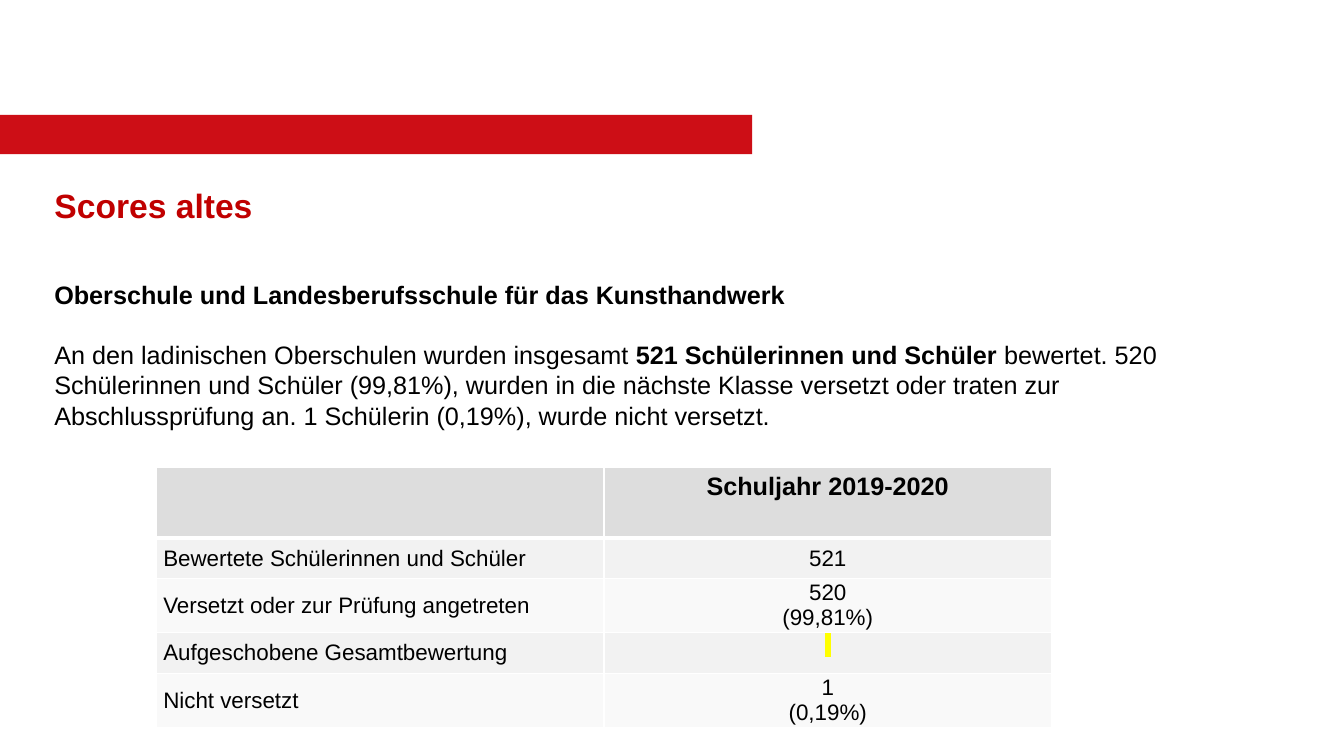
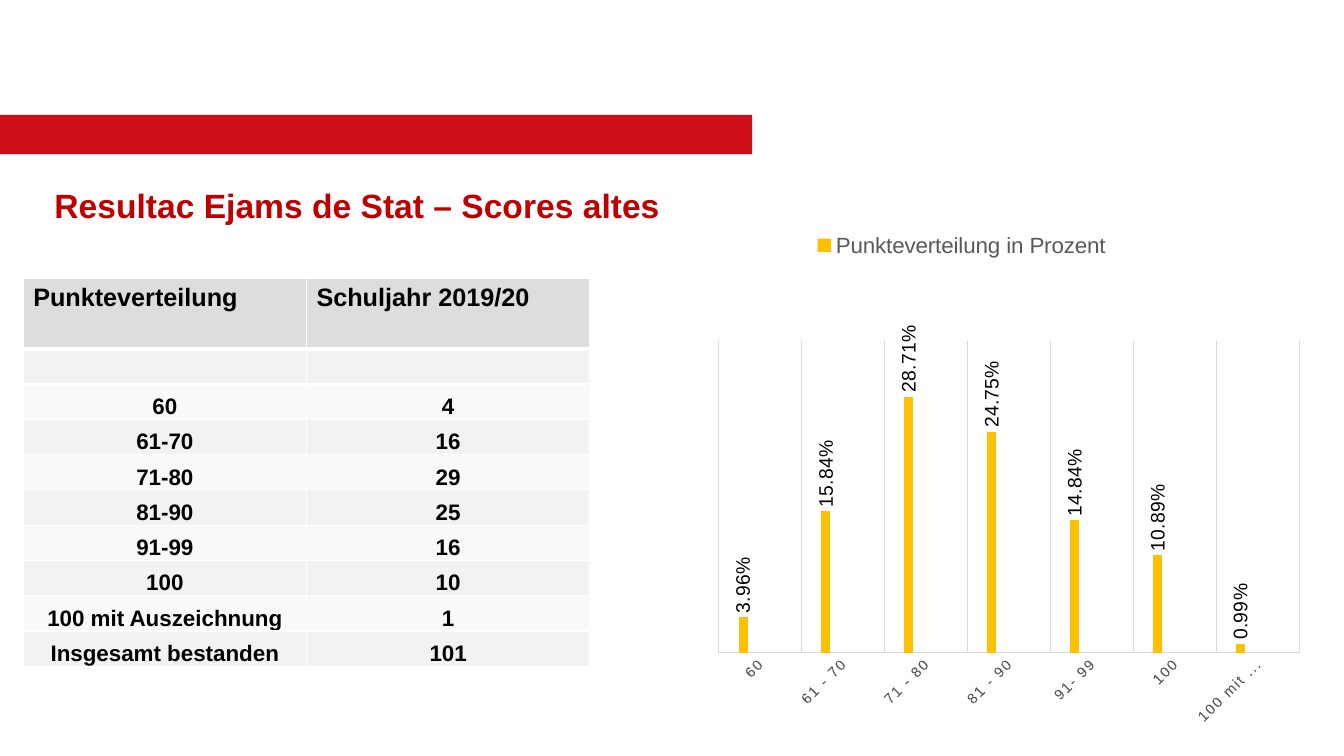
from pptx import Presentation
from pptx.chart.data import CategoryChartData
from pptx.dml.color import RGBColor
from pptx.enum.chart import XL_CHART_TYPE, XL_LABEL_POSITION, XL_LEGEND_POSITION, XL_TICK_MARK
from pptx.enum.shapes import MSO_SHAPE
from pptx.enum.text import MSO_ANCHOR, PP_ALIGN
from pptx.oxml import parse_xml
from pptx.oxml.ns import nsdecls
from pptx.util import Inches, Pt

LEFT, CENTER = PP_ALIGN.LEFT, PP_ALIGN.CENTER
TOP, MIDDLE, BOTTOM = MSO_ANCHOR.TOP, MSO_ANCHOR.MIDDLE, MSO_ANCHOR.BOTTOM
RECTANGLE = MSO_SHAPE.RECTANGLE
CLUSTERED = XL_CHART_TYPE.COLUMN_CLUSTERED
OUTSIDE_END = XL_LABEL_POSITION.OUTSIDE_END
LEGEND_TOP = XL_LEGEND_POSITION.TOP
NO_TICKS = XL_TICK_MARK.NONE

FONT = "Arial"
BAND_RED, TITLE_RED, BLACK, WHITE = "CD0E16", "C00000", "000000", "FFFFFF"
HEADER_GREY, ROW_GREYS = "DDDDDD", ("F2F2F2", "F9F9F9")
AXIS_TEXT, AXIS_LINE, BAR_YELLOW = "595959", "D9D9D9", "FFC000"
HEADER_HEIGHT = 0.7

# Content: school results
SCORES_TITLE = "Scores altes"
SCORES_TEXT = [
    [("Oberschule und Landesberufsschule für das Kunsthandwerk", True)],
    [("An den ladinischen Oberschulen wurden insgesamt ", False),
     ("521 Schülerinnen und Schüler", True),
     (" bewertet. 520 Schülerinnen und Schüler (99,81%), wurden in die nächste "
      "Klasse versetzt oder traten zur Abschlussprüfung an. 1 Schülerin (0,19%), "
      "wurde nicht versetzt.", False)],
]
MARKED_BLANK = " "
SCORES_ROWS = [
    ("", "Schuljahr 2019-2020"),
    ("Bewertete Schülerinnen und Schüler", "521"),
    ("Versetzt oder zur Prüfung angetreten", "520\n(99,81%)"),
    ("Aufgeschobene Gesamtbewertung", MARKED_BLANK),
    ("Nicht versetzt", "1\n(0,19%)"),
]
SCORES_HEIGHTS = [HEADER_HEIGHT, 0.4, 0.53, 0.41, 0.53]

# Content: final exams
EXAMS_TITLE = "Resultac Ejams de Stat – Scores altes"
EXAMS_ROWS = [
    ("Punkteverteilung", "Schuljahr 2019/20"),
    ("", ""),
    ("60", "4"),
    ("61-70", "16"),
    ("71-80", "29"),
    ("81-90", "25"),
    ("91-99", "16"),
    ("100", "10"),
    ("100 mit Auszeichnung", "1"),
    ("Insgesamt bestanden", "101"),
]
EXAMS_HEIGHTS = [HEADER_HEIGHT] + [0.35] * (len(EXAMS_ROWS) - 1)
SHARES_NAME = "Punkteverteilung in Prozent"
SHARES = {"60": 0.0396, "61 - 70": 0.1584, "71 - 80": 0.2871, "81 - 90": 0.2475,
          "91- 99": 0.1484, "100": 0.1089, "100 mit Auszeichnung": 0.0099}
EMPTY_SERIES = ("Series 2", "Series 3")


def rgb(color):
    return RGBColor.from_string(color)


def style(font, size, color=BLACK, bold=False):
    font.name, font.size, font.bold = FONT, Pt(size), bold
    font.color.rgb = rgb(color)


def add_run(paragraph, text, size, color=BLACK, bold=False):
    run = paragraph.add_run()
    run.text = text
    style(run.font, size, color, bold)
    return run


def add_band(layout, slide):
    """Draw the red band and hand it to the layout that all slides share."""
    band = slide.shapes.add_shape(RECTANGLE, 0, Inches(1.14), Inches(7.46), Inches(0.39))
    band.shadow.inherit = False
    band.fill.solid()
    band.fill.fore_color.rgb = rgb(BAND_RED)
    band.line.fill.background()
    band._element.nvSpPr.cNvPr.set("id", "99")
    layout.shapes._spTree.insert(2, band._element)


def add_titled_slide(prs, layout, text):
    slide = prs.slides.add_slide(layout)
    title = slide.shapes.title
    title.left, title.top = Inches(0.44), Inches(1.78)
    title.width, title.height = Inches(10.64), Inches(0.84)
    title.text_frame.vertical_anchor = TOP
    paragraph = title.text_frame.paragraphs[0]
    paragraph.alignment = LEFT
    add_run(paragraph, text, 24, TITLE_RED, True)
    return slide


def set_borders(cell, is_header):
    sides = [("L", 1), ("R", 1)] + ([("T", 1), ("B", 3)] if is_header else [("B", 1)])
    cell_props = cell._tc.get_or_add_tcPr()
    for place, (side, points) in enumerate(sides):
        cell_props.insert(place, parse_xml(
            f'<a:ln{side} {nsdecls("a")} w="{Pt(points)}"><a:solidFill>'
            f'<a:srgbClr val="{WHITE}"/></a:solidFill></a:ln{side}>'))


def fill_cell(cell, text, is_header, shade, align, anchor, side_margin, bold):
    cell.fill.solid()
    cell.fill.fore_color.rgb = rgb(shade)
    set_borders(cell, is_header)
    cell.margin_left = cell.margin_right = Inches(side_margin)
    cell.margin_top = cell.margin_bottom = Inches(0.05 if is_header else 0)
    cell.vertical_anchor = anchor
    for number, line in enumerate(text.split("\n")):
        frame = cell.text_frame
        paragraph = frame.add_paragraph() if number else frame.paragraphs[0]
        paragraph.alignment = align
        if line:
            run = add_run(paragraph, line, 18 if is_header else 16, bold=bold)
            if line == MARKED_BLANK:
                run.font._element.find("{*}solidFill").addnext(parse_xml(
                    f'<a:highlight {nsdecls("a")}><a:srgbClr val="FFFF00"/></a:highlight>'))


def add_results(slide, rows, heights, left, top, width, header_align, aligns,
                anchor, side_margin, bold):
    table = slide.shapes.add_table(len(rows), 2, Inches(left), Inches(top),
                                   Inches(width), Inches(sum(heights))).table
    table.horz_banding = False
    for column in table.columns:
        column.width = Inches(width / 2)
    for r, (texts, height) in enumerate(zip(rows, heights)):
        table.rows[r].height = Inches(height)
        is_header = r == 0
        shade = HEADER_GREY if is_header else ROW_GREYS[(r - 1) % 2]
        for c, text in enumerate(texts):
            at_top = is_header or text == MARKED_BLANK
            fill_cell(table.cell(r, c), text, is_header, shade,
                      header_align if is_header else aligns[c],
                      TOP if at_top else anchor,
                      0.1 if is_header else side_margin, is_header or bold)


def add_scores_text(slide):
    box = slide.shapes.add_textbox(Inches(0.44), Inches(2.72), Inches(11.5), Inches(1.92))
    frame = box.text_frame
    frame.word_wrap = True
    for number, runs in enumerate(SCORES_TEXT):
        paragraph = frame.add_paragraph() if number else frame.paragraphs[0]
        if number:
            paragraph.space_before = Pt(21.5)
        for text, bold in runs:
            add_run(paragraph, text, 18, bold=bold)


def add_shares_chart(slide):
    data = CategoryChartData(number_format="0.00%")
    data.categories = list(SHARES)
    data.add_series(SHARES_NAME, list(SHARES.values()))
    for name in EMPTY_SERIES:
        data.add_series(name, [None] * len(SHARES))
    chart = slide.shapes.add_chart(CLUSTERED, Inches(6.19), Inches(2.2),
                                   Inches(6.7), Inches(4.99), data).chart
    chart.has_title = False
    style(chart.font, 10)

    # Columns and their upright labels
    plot = chart.plots[0]
    plot.vary_by_categories = False
    plot.gap_width, plot.overlap = 444, -90
    shares = plot.series[0]
    shares.format.fill.solid()
    shares.format.fill.fore_color.rgb = rgb(BAR_YELLOW)
    labels = shares.data_labels
    labels.show_value = True
    labels.position = OUTSIDE_END
    labels.number_format, labels.number_format_is_linked = "0.00%", False
    style(labels.font, 14)
    labels._element.xpath("c:txPr/a:bodyPr")[0].set("rot", "-5400000")

    # Axes
    points = chart.category_axis
    points.major_tick_mark = points.minor_tick_mark = NO_TICKS
    points.has_major_gridlines = True
    for line in (points.format.line, points.major_gridlines.format.line):
        line.color.rgb = rgb(AXIS_LINE)
        line.width = Pt(0.75)
    style(points.tick_labels.font, 10.6, AXIS_TEXT)
    points._element.xpath("c:txPr/a:bodyPr")[0].set("rot", "-2700000")
    points._element.xpath("c:txPr//a:defRPr")[0].set("spc", "120")
    percent = chart.value_axis
    percent.minimum_scale, percent.maximum_scale = 0, 0.35
    percent.has_major_gridlines = False
    percent.visible = False

    # Legend without the empty series
    chart.has_legend = True
    legend = chart.legend
    legend.position = LEGEND_TOP
    legend.include_in_layout = False
    style(legend.font, 16, AXIS_TEXT)
    position = legend._element.xpath("c:legendPos")[0]
    for index in range(len(EMPTY_SERIES), 0, -1):
        position.addnext(parse_xml(
            f'<c:legendEntry {nsdecls("c")}><c:idx val="{index}"/>'
            '<c:delete val="1"/></c:legendEntry>'))

    # Fixed plot area
    area = chart._chartSpace.xpath("c:chart/c:plotArea")[0]
    for layout in area.xpath("c:layout"):
        area.remove(layout)
    sizes = "".join(f'<c:{key} val="{value}"/>' for key, value in
                    (("x", 0.14), ("y", 0.24), ("w", 0.86), ("h", 0.63)))
    area.insert(0, parse_xml(
        f'<c:layout {nsdecls("c")}><c:manualLayout><c:layoutTarget val="inner"/>'
        f'<c:xMode val="edge"/><c:yMode val="edge"/>{sizes}'
        '</c:manualLayout></c:layout>'))


def main():
    prs = Presentation()
    prs.slide_width, prs.slide_height = Inches(13.33), Inches(7.5)
    layout = prs.slide_layouts[5]

    scores = add_titled_slide(prs, layout, SCORES_TITLE)
    add_band(layout, scores)
    add_scores_text(scores)
    add_results(scores, SCORES_ROWS, SCORES_HEIGHTS, 1.55, 4.64, 8.88,
                CENTER, (LEFT, CENTER), MIDDLE, 0.07, False)

    exams = add_titled_slide(prs, layout, EXAMS_TITLE)
    add_results(exams, EXAMS_ROWS, EXAMS_HEIGHTS, 0.23, 2.76, 5.62,
                LEFT, (CENTER, CENTER), BOTTOM, 0.05, True)
    add_shares_chart(exams)

    prs.save("out.pptx")


if __name__ == "__main__":
    main()
